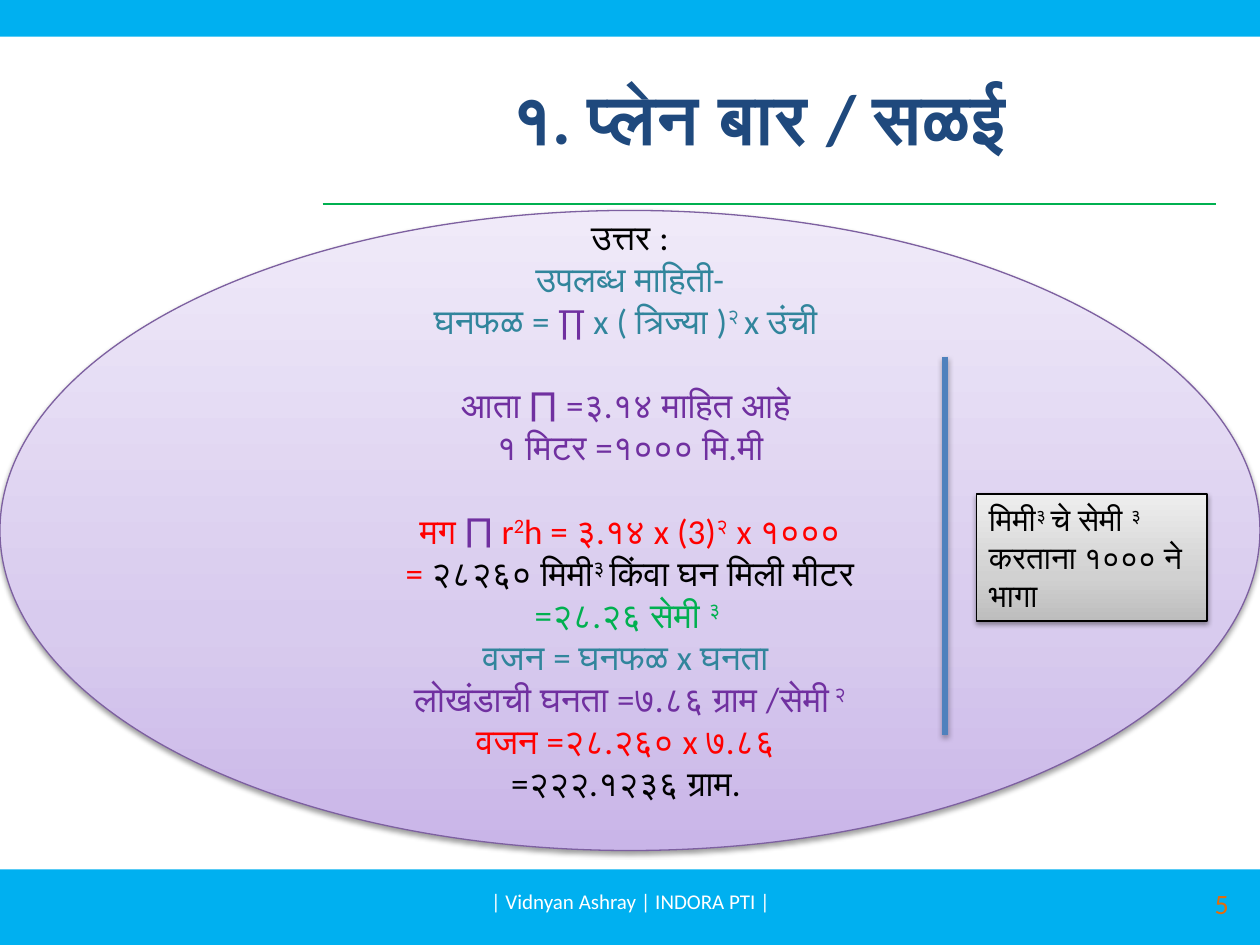
from lxml import etree
from pptx import Presentation
from pptx.dml.color import RGBColor
from pptx.enum.shapes import MSO_CONNECTOR, MSO_SHAPE
from pptx.enum.text import MSO_ANCHOR, MSO_AUTO_SIZE, PP_ALIGN
from pptx.oxml import parse_xml
from pptx.oxml.ns import nsdecls, qn
from pptx.util import Inches, Pt

LINE, OVAL, RECT = MSO_CONNECTOR.STRAIGHT, MSO_SHAPE.OVAL, MSO_SHAPE.RECTANGLE
CENTER, LEFT, RIGHT = PP_ALIGN.CENTER, PP_ALIGN.LEFT, PP_ALIGN.RIGHT
TOP, MIDDLE = MSO_ANCHOR.TOP, MSO_ANCHOR.MIDDLE
GROW = MSO_AUTO_SIZE.SHAPE_TO_FIT_TEXT
WIDTH, HEIGHT = Inches(10), Inches(7.5)
FONT = "Calibri"
LINE_GAP = Pt(24)
COLORS = {
    "band": "00B0F0", "rule": "00B050", "title": "1F497D", "white": "FFFFFF",
    "number": "E46C0A", "black": "000000", "teal": "31859C", "purple": "7030A0",
    "red": "FF0000", "green": "00B050", "oval_edge": "7D60A0", "divider": "4F81BD",
}
LILAC = ((0, "C9B5E8"), (35, "D8CBEE"), (100, "F0EAF9"))
GREY = ((0, "BDBDBD"), (35, "D1D1D1"), (100, "EEEEEE"))

# A line is (runs, gap before); a run is (text, colour) and "^" marks a raised one.
SOLUTION = [
    ([("उत्तर :", "black")], 0),
    ([("उपलब्ध माहिती-", "teal")], 0),
    ([("घनफळ = ", "teal"), ("∏", "purple"), (" x ( त्रिज्या )", "teal"),
      ("^२ ", "teal"), ("x उंची ", "teal")], 0),
    ([("आता ∏ =३.१४ माहित आहे ", "purple")], LINE_GAP),
    ([("१ मिटर =१००० मि.मी", "purple")], 0),
    ([("मग ", "red"), ("∏ ", "purple"), ("r", "red"), ("^2", "red"),
      ("h = ३.१४ x (3)", "red"), ("^२", "red"), (" x १०००", "red")], LINE_GAP),
    ([("=", "red"), (" २८२६० मिमी", "black"), ("^३ ", "black"),
      ("किंवा घन मिली मीटर", "black")], 0),
    ([("=२८.२६ सेमी ", "green"), ("^३ ", "green")], 0),
    ([("वजन = घनफळ x घनता ", "teal")], 0),
    ([("लोखंडाची घनता =७.८६ ग्राम /सेमी", "purple"), ("^ २", "purple")], 0),
    ([("वजन =२८.२६० x ७.८६ ", "red")], 0),
    ([("=२२२.१२३६ ग्राम. ", "black")], 0),
]
CONVERSION = [
    ([("मिमी", "black"), ("^३ ", "black"), ("चे सेमी ", "black"), ("^३", "black")], 0),
    ([("करताना १००० ने भागा", "black")], 0),
]


def rgb(name):
    return RGBColor.from_string(COLORS[name])


def area(left, top, width, height):
    """Turn percentages of the slide into a position and a size."""
    return [round(share * side / 100) for share, side in
            zip((left, top, width, height), (WIDTH, HEIGHT) * 2)]


def apply(target, values):
    for name, value in values.items():
        setattr(target, name, value)


def add_shadow(element, opacity, distance):
    properties = element.spPr
    for old in properties.findall(qn("a:effectLst")):
        properties.remove(old)
    properties.append(parse_xml(
        f'<a:effectLst {nsdecls("a")}><a:outerShdw blurRad="{Pt(3.1)}" '
        f'dist="{Pt(distance)}" dir="5400000" rotWithShape="0"><a:srgbClr val="000000">'
        f'<a:alpha val="{opacity * 1000}"/></a:srgbClr></a:outerShdw></a:effectLst>'))


def fill_gradient(shape, stops):
    """Fill from bottom to top through all the stops."""
    shape.fill.gradient()
    shape.fill.gradient_angle = 90
    stop_list = shape._element.spPr.find(".//" + qn("a:gsLst"))
    for old in list(stop_list):
        stop_list.remove(old)
    for position, color in stops:
        stop = etree.SubElement(stop_list, qn("a:gs"), pos=str(position * 1000))
        etree.SubElement(stop, qn("a:srgbClr"), val=color)


def write(frame, lines, size, align=CENTER, bold=False, **frame_values):
    apply(frame, {"word_wrap": True, "vertical_anchor": MIDDLE, **frame_values})
    for index, (runs, gap) in enumerate(lines):
        paragraph = frame.add_paragraph() if index else frame.paragraphs[0]
        apply(paragraph, {"alignment": align, "space_before": gap})
        for text, color in runs:
            run = paragraph.add_run()
            run.text = text.removeprefix("^")
            apply(run.font, {"name": FONT, "size": Pt(size), "bold": bold})
            run.font.color.rgb = rgb(color)
            if text.startswith("^"):
                run._r.get_or_add_rPr().set("baseline", "30000")


def add_band(slide, top, height):
    band = slide.shapes.add_shape(RECT, *area(0, top, 100, height))
    band.shadow.inherit = False
    band.fill.solid()
    band.fill.fore_color.rgb = rgb("band")
    band.line.fill.background()


def add_line(slide, start, end, color, width):
    line = slide.shapes.add_connector(LINE, *area(*start, *end))
    line.line.color.rgb = rgb(color)
    line.line.width = Pt(width)
    etree.SubElement(line._element.spPr, qn("a:effectLst"))
    return line


def add_panel(slide, kind, place, stops, edge):
    panel = slide.shapes.add_shape(kind, *area(*place))
    fill_gradient(panel, stops)
    panel.line.color.rgb = rgb(edge)
    panel.line.width = Pt(0.75)
    add_shadow(panel._element, 38, 1.6)
    return panel.text_frame


def add_label(slide, place, text, color, size, align):
    frame = slide.shapes.add_textbox(*area(*place)).text_frame
    write(frame, [([(text, color)], 0)], size, align)
    return frame.paragraphs[0].runs[0]


def outline_text(run, color, width):
    run._r.get_or_add_rPr().insert(0, parse_xml(
        f'<a:ln {nsdecls("a")} w="{Pt(width)}"><a:solidFill>'
        f'<a:srgbClr val="{COLORS[color]}"/></a:solidFill></a:ln>'))


def main():
    deck = Presentation()
    apply(deck, {"slide_width": WIDTH, "slide_height": HEIGHT})
    slide = deck.slides.add_slide(deck.slide_layouts[5])

    add_band(slide, 92, 8)
    add_line(slide, (25.6, 21.6), (96.5, 21.6), "rule", 0.75)
    add_band(slide, 0, 3.87)

    title = slide.shapes.title
    apply(title, dict(zip(("left", "top", "width", "height"),
                          area(25.6, 4, 70.9, 16.67))))
    write(title.text_frame, [([("१. प्लेन बार / सळई ", "title")], 0)], 40, bold=True)

    add_label(slide, (34.2, 92.67, 31.7, 5.33), "| Vidnyan Ashray | INDORA PTI |",
              "white", 12, CENTER)
    number = add_label(slide, (75.2, 92.93, 23.3, 5.33), "5", "number", 16, RIGHT)
    outline_text(number, "white", 1.45)

    solution = add_panel(slide, OVAL, (0, 22.27, 100, 67.73), LILAC, "oval_edge")
    write(solution, SOLUTION, 20, margin_bottom=Inches(0.05) + LINE_GAP)

    divider = add_line(slide, (75, 37.73), (75, 77.73), "divider", 3)
    add_shadow(divider._element, 35, 1.8)

    conversion = add_panel(slide, RECT, (77.5, 52.27, 18.3, 13.47), GREY, "black")
    write(conversion, CONVERSION, 18, LEFT, vertical_anchor=TOP, auto_size=GROW)

    deck.save("out.pptx")


if __name__ == "__main__":
    main()
